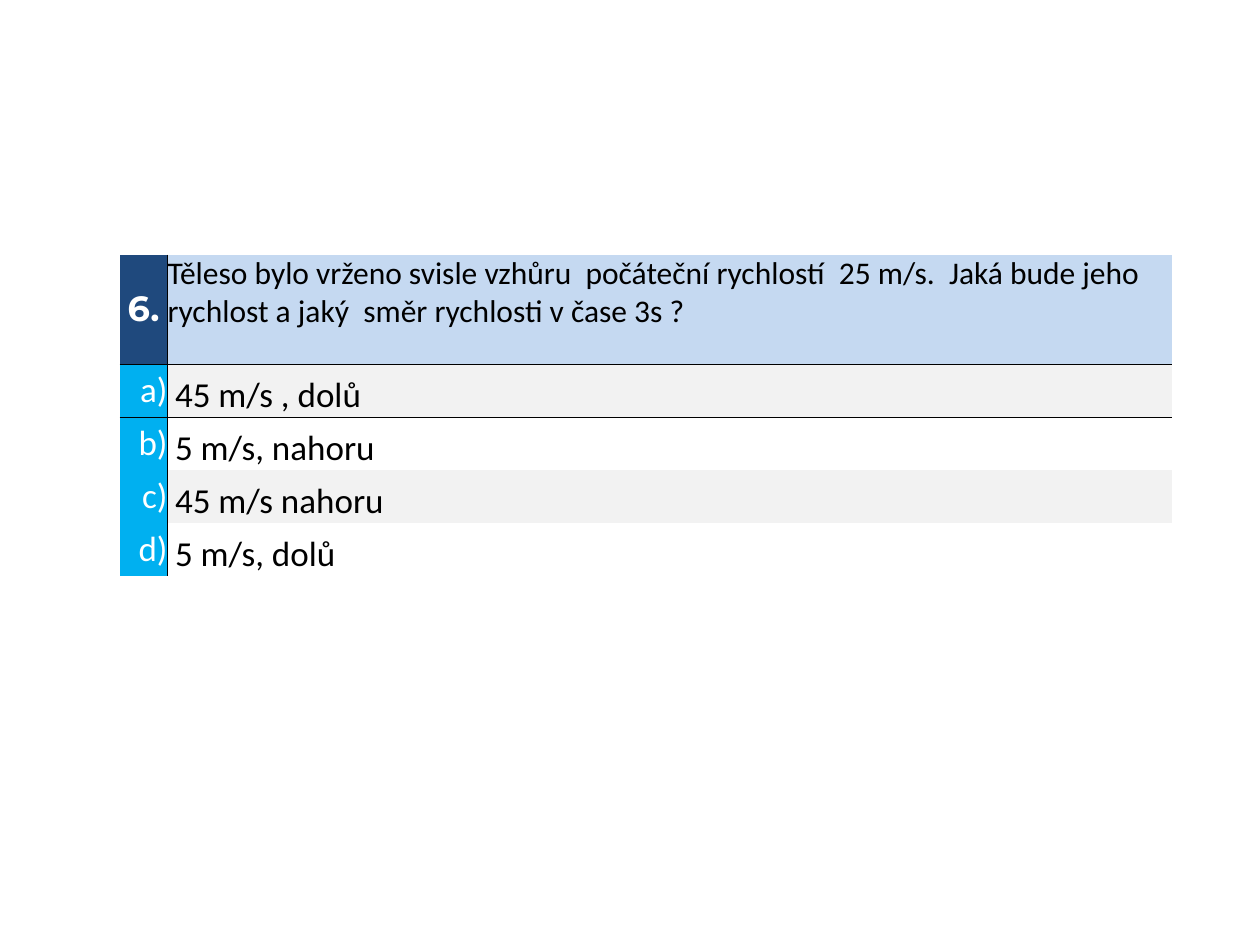
import pptx
import pptx.util
import pptx.dml.color
import pptx.enum.text
import pptx.oxml.ns
import lxml.etree

Inches = pptx.util.Inches
RGBColor = pptx.dml.color.RGBColor
Align = pptx.enum.text.PP_ALIGN
Anchor = pptx.enum.text.MSO_ANCHOR

BLACK = RGBColor(0, 0, 0)
WHITE = RGBColor(255, 255, 255)
NAVY = RGBColor(0x1F, 0x49, 0x7D)
PALE = RGBColor(0xC5, 0xD9, 0xF1)
CYAN = RGBColor(0x00, 0xB0, 0xF0)
GREY = RGBColor(0xF2, 0xF2, 0xF2)
NO_GRID = "{2D5ABB26-0587-4C30-8999-92F81FD0307C}"


def add_edge(cell, side):
    """Draw a thin black line on one side (L, R, T or B) of a cell."""
    props = cell._tc.get_or_add_tcPr()
    line = lxml.etree.SubElement(
        props, pptx.oxml.ns.qn("a:ln" + side), w=str(pptx.util.Pt(0.5)))
    fill = lxml.etree.SubElement(line, pptx.oxml.ns.qn("a:solidFill"))
    lxml.etree.SubElement(fill, pptx.oxml.ns.qn("a:srgbClr"), val=str(BLACK))


def fill_cell(cell, text, size, color, back, align, anchor):
    """Set the text, format and fill of a cell."""
    cell.margin_left = cell.margin_right = 0
    cell.margin_top = cell.margin_bottom = 0
    cell.vertical_anchor = anchor
    if back is None:
        cell.fill.background()
    else:
        cell.fill.solid()
        cell.fill.fore_color.rgb = back
    cell.text_frame.text = text
    para = cell.text_frame.paragraphs[0]
    para.alignment = align
    font = para.runs[0].font
    font.name = "Calibri"
    font.size = pptx.util.Pt(size)
    font.bold = False
    font.color.rgb = color


deck = pptx.Presentation()
deck.slide_width = Inches(10)
deck.slide_height = Inches(7.5)
slide = deck.slides.add_slide(deck.slide_layouts[6])

# Table grid
answers = ["45 m/s , dolů", "5 m/s, nahoru", "45 m/s nahoru", "5 m/s, dolů"]
frame = slide.shapes.add_table(
    len(answers) + 1, 2, Inches(0.95), Inches(2.02), Inches(8.35), Inches(2.53))
table = frame.table
table.first_row = table.horz_banding = False
table._tbl.tblPr.find(pptx.oxml.ns.qn("a:tableStyleId")).text = NO_GRID
table.columns[0].width = Inches(0.38)
table.columns[1].width = Inches(7.97)
for index, row in enumerate(table.rows):
    row.height = Inches(0.42 if index else 0.87)

# Lines beside the labels and below the question
for index, row in enumerate(table.rows):
    for cell, side in zip(row.cells, "RL"):
        add_edge(cell, side)
        if index < 2:
            add_edge(cell, "BT"[index])

# Question
number, question = table.rows[0].cells
fill_cell(number, "6.", 20, WHITE, NAVY, Align.CENTER, Anchor.MIDDLE)
font = number.text_frame.paragraphs[0].runs[0].font
font.name = "Montserrat"
font.bold = True
fill_cell(
    question,
    "Těleso bylo vrženo svisle vzhůru  počáteční rychlostí  25 m/s.  "
    "Jaká bude jeho rychlost a jaký  směr rychlosti v čase 3s ?",
    18, BLACK, PALE, Align.LEFT, Anchor.TOP)

# Answers, every other one shaded
for index, answer in enumerate(answers):
    label, choice = table.rows[index + 1].cells
    fill_cell(label, "abcd"[index] + ")", 20, WHITE, CYAN,
              Align.RIGHT, Anchor.MIDDLE)
    back = None if index % 2 else GREY
    fill_cell(choice, answer, 20, BLACK, back, Align.LEFT, Anchor.BOTTOM)
    choice.margin_left = Inches(0.06)

deck.save("out.pptx")
